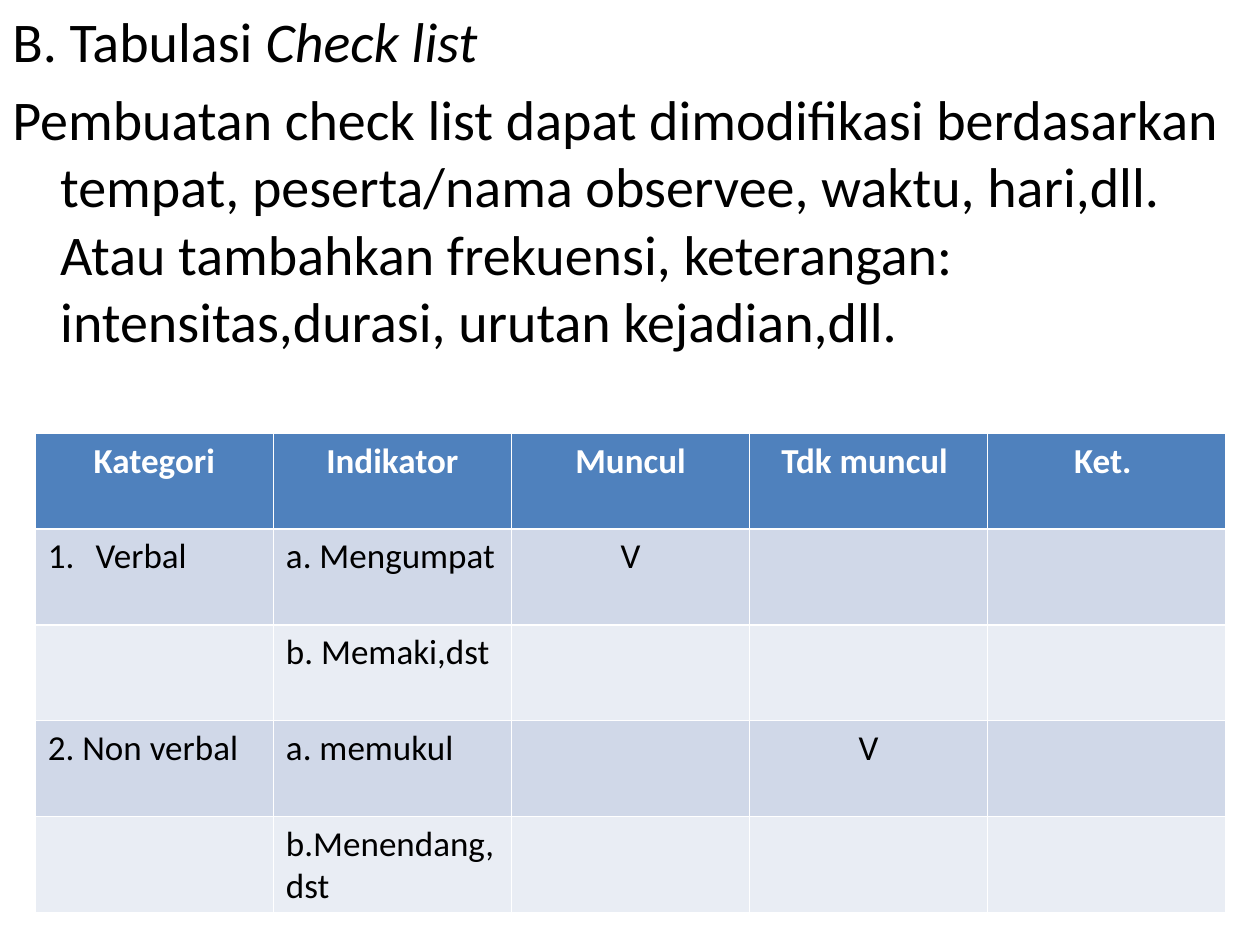
from lxml.etree import SubElement
from pptx import Presentation
from pptx.dml.color import RGBColor
from pptx.enum.text import PP_ALIGN as Align
from pptx.oxml.ns import qn
from pptx.util import Inches, Pt

BLACK = RGBColor(0x00, 0x00, 0x00)
WHITE = RGBColor(0xFF, 0xFF, 0xFF)
BLUE = RGBColor(0x4F, 0x81, 0xBD)
BANDS = (RGBColor(0xE9, 0xED, 0xF4), RGBColor(0xD0, 0xD8, 0xE8))
FONT = "Calibri"
HANG = 0.38

INTRO = [
    [("B. Tabulasi ", False), ("Check list", True)],
    [("Pembuatan check list dapat dimodifikasi berdasarkan tempat, "
      "peserta/nama observee, waktu, hari,dll. Atau tambahkan frekuensi, "
      "keterangan: intensitas,durasi, urutan kejadian,dll.", False)],
]
ROWS = [
    ["Kategori", "Indikator", "Muncul", "Tdk muncul ", "Ket. "],
    ["Verbal", "a. Mengumpat", "V", "", ""],
    ["", "b. Memaki,dst", "", "", ""],
    ["2. Non verbal", "a. memukul", "", "V", ""],
    ["", "b.Menendang,\ndst", "", "", ""],
]
HUNG = {"Verbal", "a. Mengumpat"}


def add_run(para, text, size, color=BLACK, bold=False, italic=False):
    run = para.add_run()
    run.text = text
    font = run.font
    font.name, font.size = FONT, Pt(size)
    font.bold, font.italic = bold, italic
    font.color.rgb = color


def hang(para):
    """Indent all lines but the first."""
    props = para._p.get_or_add_pPr()
    props.set("marL", str(Inches(HANG)))
    props.set("indent", str(-Inches(HANG)))
    return props


def next_para(frame, index):
    return frame.add_paragraph() if index else frame.paragraphs[0]


def add_intro(slide, left, top, width, height):
    box = slide.shapes.add_textbox(
        Inches(left), Inches(top), Inches(width), Inches(height))
    frame = box.text_frame
    frame.word_wrap = True
    for i, runs in enumerate(INTRO):
        para = next_para(frame, i)
        hang(para)
        para.space_before = Pt(6.4)
        for text, italic in runs:
            add_run(para, text, 32, italic=italic)


def fill_cell(cell, text, row, col):
    head = row == 0
    cell.fill.solid()
    cell.fill.fore_color.rgb = BLUE if head else BANDS[row % 2]
    if not text:
        return
    for i, line in enumerate(text.split("\n")):
        para = next_para(cell.text_frame, i)
        if head or col > 1:
            para.alignment = Align.CENTER
        if line in HUNG:
            props = hang(para)
            if col == 0:
                SubElement(props, qn("a:buFont"), typeface="+mj-lt")
                SubElement(props, qn("a:buAutoNum"), type="arabicPeriod")
        add_run(para, line, 20, WHITE if head else BLACK, bold=head)


def add_checks(slide, left, top, width, height):
    table = slide.shapes.add_table(
        len(ROWS), len(ROWS[0]), Inches(left), Inches(top),
        Inches(width), Inches(height)).table
    for r, texts in enumerate(ROWS):
        for c, text in enumerate(texts):
            fill_cell(table.cell(r, c), text, r, c)


def main():
    deck = Presentation()
    deck.slide_width, deck.slide_height = Inches(10), Inches(7.5)
    slide = deck.slides.add_slide(deck.slide_layouts[6])
    add_intro(slide, 0, 0, 10, 7.5)
    add_checks(slide, 0.28, 3.44, 9.45, 3.8)
    deck.save("out.pptx")


if __name__ == "__main__":
    main()
